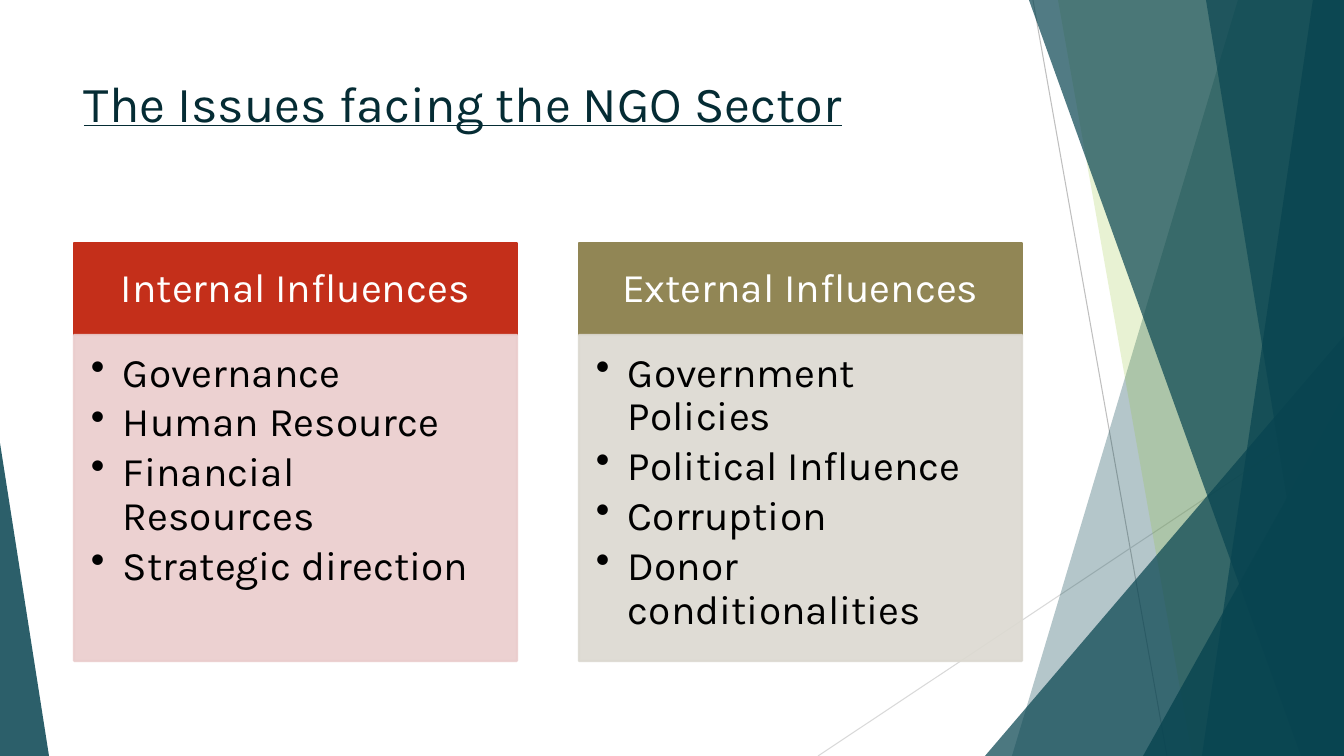
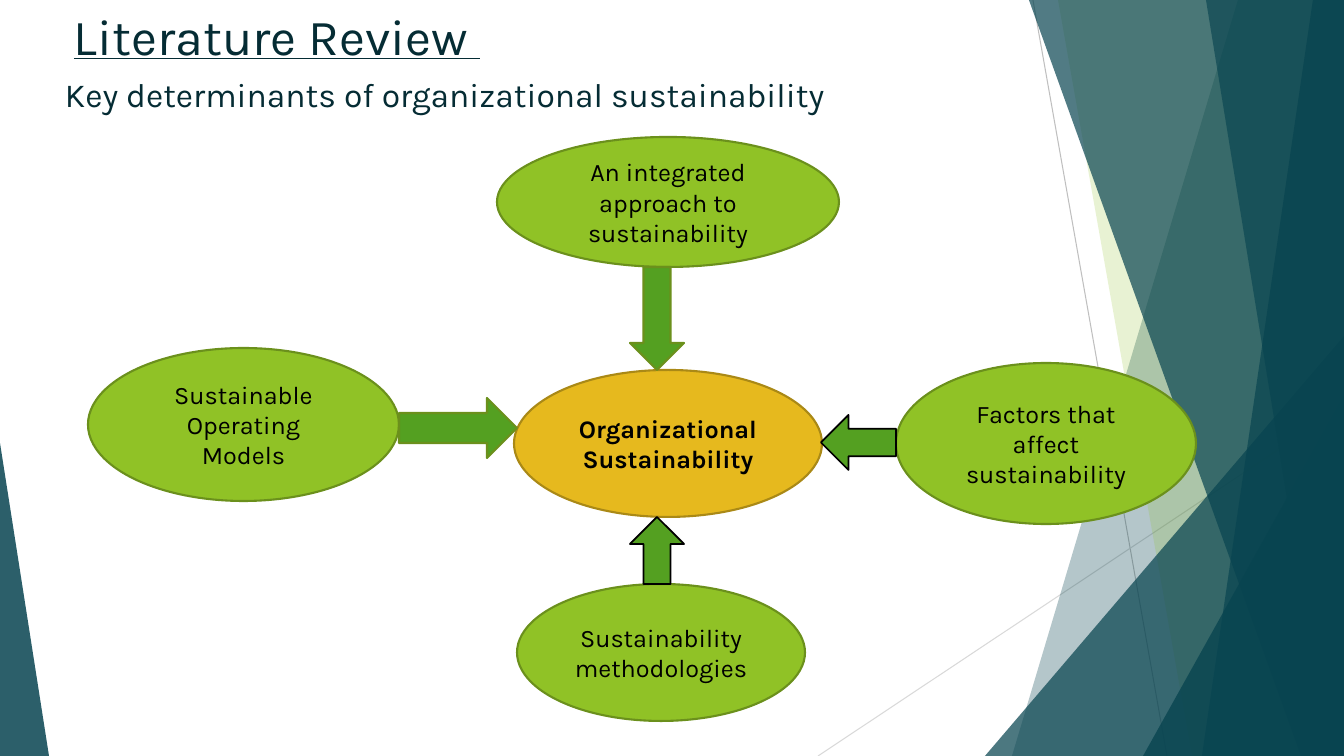
from dataclasses import dataclass

from lxml.etree import SubElement
from pptx import Presentation
from pptx.dml.color import RGBColor
from pptx.enum.shapes import MSO_CONNECTOR, MSO_SHAPE
from pptx.enum.text import MSO_ANCHOR, PP_ALIGN
from pptx.oxml.ns import qn
from pptx.shapes.autoshape import Shape
from pptx.slide import Slide
from pptx.text.text import TextFrame, _Paragraph
from pptx.util import Emu, Pt

WIDTH, HEIGHT = 1344, 756
EMU_PER_PX = 12192000 / WIDTH
FONT = "Karla"
COLORS = {
    "teal": "084450", "lime": "90C226", "lime edge": "6B901C",
    "green": "54A021", "gold": "E6B91E", "gold edge": "AA8916",
    "heading": "052C34", "black": "000000", "white": "FFFFFF",
    "red": "C42F1A", "pink": "EACDCD", "olive": "918655", "stone": "DCD9D1",
    "gray": "BFBFBF", "light gray": "D9D9D9",
}


@dataclass(frozen=True)
class Box:
    left: int
    top: int
    width: int
    height: int


@dataclass(frozen=True)
class Facet:
    """Band from a top corner to a bottom corner, filled to the right edge."""
    top_x: int
    bottom_x: int
    color: str
    opacity: int


@dataclass(frozen=True)
class Wedge:
    """Right triangle whose apex is at the given share of its width."""
    box: Box
    apex: int
    opacity: int


@dataclass(frozen=True)
class Ray:
    start: tuple[int, int]
    end: tuple[int, int]
    color: str


@dataclass(frozen=True)
class Panel:
    heading: str
    points: tuple[str, ...]
    heading_color: str
    body_color: str


@dataclass(frozen=True)
class Oval:
    label: str
    box: Box
    fill: str = "lime"
    edge: str = "lime edge"
    bold: bool = False


@dataclass(frozen=True)
class BlockArrow:
    direction: MSO_SHAPE
    box: Box
    edge: str
    edge_pt: float


RAYS = (
    Ray((1033, 0), (1167, HEIGHT), "gray"),
    Ray((WIDTH, 406), (818, HEIGHT), "light gray"),
)
BACKDROP = (
    Facet(1238, 1012, "teal", 30),
    Facet(1058, 1192, "lime", 20),
    Wedge(Box(985, 336, 359, 420), 1, 72),
    Facet(1029, 1301, "teal", 70),
    Facet(1313, 1202, "teal", 70),
    Facet(1206, 1329, "teal", 65),
    Wedge(Box(1143, 396, 201, 360), 1, 80),
    Wedge(Box(0, 443, 49, 313), 0, 85),
)

PANEL_LEFT, PANEL_TOP, PANEL_WIDTH, PANEL_PITCH = 74, 243, 443, 505
HEADING_HEIGHT, BODY_HEIGHT = 92, 326
BULLET_INDENT = 32
PANELS = (
    Panel("Internal Influences",
          ("Governance", "Human Resource", "Financial Resources",
           "Strategic direction"), "red", "pink"),
    Panel("External Influences",
          ("Government Policies", "Political Influence", "Corruption",
           "Donor conditionalities"), "olive", "stone"),
)

DETERMINANTS = (
    Oval("An integrated approach to sustainability", Box(497, 137, 342, 130)),
    Oval("Sustainable Operating Models", Box(88, 348, 311, 153)),
    Oval("Organizational Sustainability", Box(514, 370, 308, 147),
         "gold", "gold edge", True),
    Oval("Factors that affect sustainability", Box(896, 363, 300, 161)),
    Oval("Sustainability methodologies", Box(517, 584, 288, 137)),
)
ARROWS = (
    BlockArrow(MSO_SHAPE.RIGHT_ARROW, Box(399, 398, 118, 60), "lime edge", 1.5),
    BlockArrow(MSO_SHAPE.DOWN_ARROW, Box(630, 267, 54, 103), "lime edge", 1.5),
    BlockArrow(MSO_SHAPE.UP_ARROW, Box(630, 517, 54, 67), "black", 1.25),
    BlockArrow(MSO_SHAPE.LEFT_ARROW, Box(821, 415, 75, 55), "black", 1.25),
)


def px(length: int) -> Emu:
    return Emu(round(length * EMU_PER_PX))


def place(box: Box) -> tuple[Emu, Emu, Emu, Emu]:
    return px(box.left), px(box.top), px(box.width), px(box.height)


def rgb(color: str) -> RGBColor:
    return RGBColor.from_string(COLORS[color])


def paint(shape: Shape, fill: str, edge: str | None = None,
          edge_pt: float = 1.5, opacity: int = 100) -> None:
    shape.shadow.inherit = False
    shape.fill.solid()
    shape.fill.fore_color.rgb = rgb(fill)
    if edge:
        shape.line.color.rgb = rgb(edge)
        shape.line.width = Pt(edge_pt)
    else:
        shape.line.fill.background()
    if opacity < 100:
        for color in shape.element.spPr.iter(qn("a:srgbClr")):
            SubElement(color, qn("a:alpha"), val=str(opacity * 1000))


def style(paragraph: _Paragraph, size: int, color: str, bold: bool = False,
          underline: bool = False) -> None:
    for run in paragraph.runs:
        run.font.name = FONT
        run.font.size = Pt(size)
        run.font.color.rgb = rgb(color)
        run.font.bold = bold
        run.font.underline = underline


def set_insets(frame: TextFrame, left: int, top: int, right: int,
               bottom: int) -> None:
    frame.margin_left, frame.margin_top = px(left), px(top)
    frame.margin_right, frame.margin_bottom = px(right), px(bottom)


def add_bullet(paragraph: _Paragraph) -> None:
    properties = paragraph._p.get_or_add_pPr()
    properties.set("marL", str(px(BULLET_INDENT)))
    properties.set("indent", str(-px(BULLET_INDENT)))
    SubElement(properties, qn("a:buChar"), char="•")


def add_text(slide: Slide, text: str, box: Box, size: int,
             underline: bool = False) -> None:
    frame = slide.shapes.add_textbox(*place(box)).text_frame
    frame.word_wrap = True
    frame.text = text
    style(frame.paragraphs[0], size, "heading", underline=underline)


def add_title(slide: Slide, title: str, left: int, top: int,
              height: int) -> None:
    add_text(slide, title, Box(left, top, 948, height), 36, underline=True)


def add_ray(slide: Slide, ray: Ray) -> None:
    line = slide.shapes.add_connector(
        MSO_CONNECTOR.STRAIGHT, *map(px, ray.start + ray.end))
    line.line.color.rgb = rgb(ray.color)
    line.line.width = Pt(0.75)
    SubElement(line.element.spPr, qn("a:effectLst"))


def add_facet(slide: Slide, facet: Facet) -> None:
    outline = slide.shapes.build_freeform(px(facet.top_x), px(0), 1.0)
    corners = ((WIDTH, 0), (WIDTH, HEIGHT), (facet.bottom_x, HEIGHT))
    outline.add_line_segments([(px(x), px(y)) for x, y in corners], close=True)
    paint(outline.convert_to_shape(), facet.color, opacity=facet.opacity)


def add_wedge(slide: Slide, wedge: Wedge) -> None:
    triangle = slide.shapes.add_shape(
        MSO_SHAPE.ISOSCELES_TRIANGLE, *place(wedge.box))
    triangle.adjustments[0] = wedge.apex
    paint(triangle, "teal", opacity=wedge.opacity)


def add_themed_slide(deck: Presentation) -> Slide:
    """Add a blank slide with the shared rays and translucent backdrop."""
    slide = deck.slides.add_slide(deck.slide_layouts[6])
    for ray in RAYS:
        add_ray(slide, ray)
    for piece in BACKDROP:
        if isinstance(piece, Facet):
            add_facet(slide, piece)
        else:
            add_wedge(slide, piece)
    return slide


def add_panel(slide: Slide, panel: Panel, left: int) -> None:
    heading = slide.shapes.add_shape(MSO_SHAPE.RECTANGLE, *place(
        Box(left, PANEL_TOP, PANEL_WIDTH, HEADING_HEIGHT)))
    paint(heading, panel.heading_color, panel.heading_color)
    set_insets(heading.text_frame, 23, 13, 23, 13)
    heading.text_frame.text = panel.heading
    caption = heading.text_frame.paragraphs[0]
    caption.alignment = PP_ALIGN.CENTER
    caption.line_spacing = 0.9
    style(caption, 29, "white")

    body = slide.shapes.add_shape(MSO_SHAPE.RECTANGLE, *place(
        Box(left, PANEL_TOP + HEADING_HEIGHT, PANEL_WIDTH, BODY_HEIGHT)))
    paint(body, panel.body_color, panel.body_color, opacity=90)
    frame = body.text_frame
    set_insets(frame, 17, 17, 24, 25)
    frame.vertical_anchor = MSO_ANCHOR.TOP
    frame.text = "\n".join(panel.points)
    for point in frame.paragraphs:
        point.alignment = PP_ALIGN.LEFT
        point.line_spacing = 0.9
        point.space_after = Pt(4.3)
        add_bullet(point)
        style(point, 29, "black")


def add_oval(slide: Slide, oval: Oval) -> None:
    ellipse = slide.shapes.add_shape(
        MSO_SHAPE.FLOWCHART_CONNECTOR, *place(oval.box))
    paint(ellipse, oval.fill, oval.edge)
    ellipse.text_frame.word_wrap = True
    ellipse.text_frame.text = oval.label
    label = ellipse.text_frame.paragraphs[0]
    label.alignment = PP_ALIGN.CENTER
    style(label, 18, "black", bold=oval.bold)


def add_issues_slide(deck: Presentation) -> None:
    slide = add_themed_slide(deck)
    add_title(slide, "The Issues facing the NGO Sector", 74, 67, 145)
    for column, panel in enumerate(PANELS):
        add_panel(slide, panel, PANEL_LEFT + column * PANEL_PITCH)


def add_literature_slide(deck: Presentation) -> None:
    slide = add_themed_slide(deck)
    add_title(slide, "Literature Review ", 64, 0, 72)
    add_text(slide, "Key determinants of organizational sustainability",
             Box(55, 69, 1108, 60), 24)
    for oval in DETERMINANTS:
        add_oval(slide, oval)
    for arrow in ARROWS:
        block = slide.shapes.add_shape(arrow.direction, *place(arrow.box))
        paint(block, "green", arrow.edge, arrow.edge_pt)


def main() -> None:
    deck = Presentation()
    deck.slide_width, deck.slide_height = px(WIDTH), px(HEIGHT)
    add_issues_slide(deck)
    add_literature_slide(deck)
    deck.save("out.pptx")


if __name__ == "__main__":
    main()
